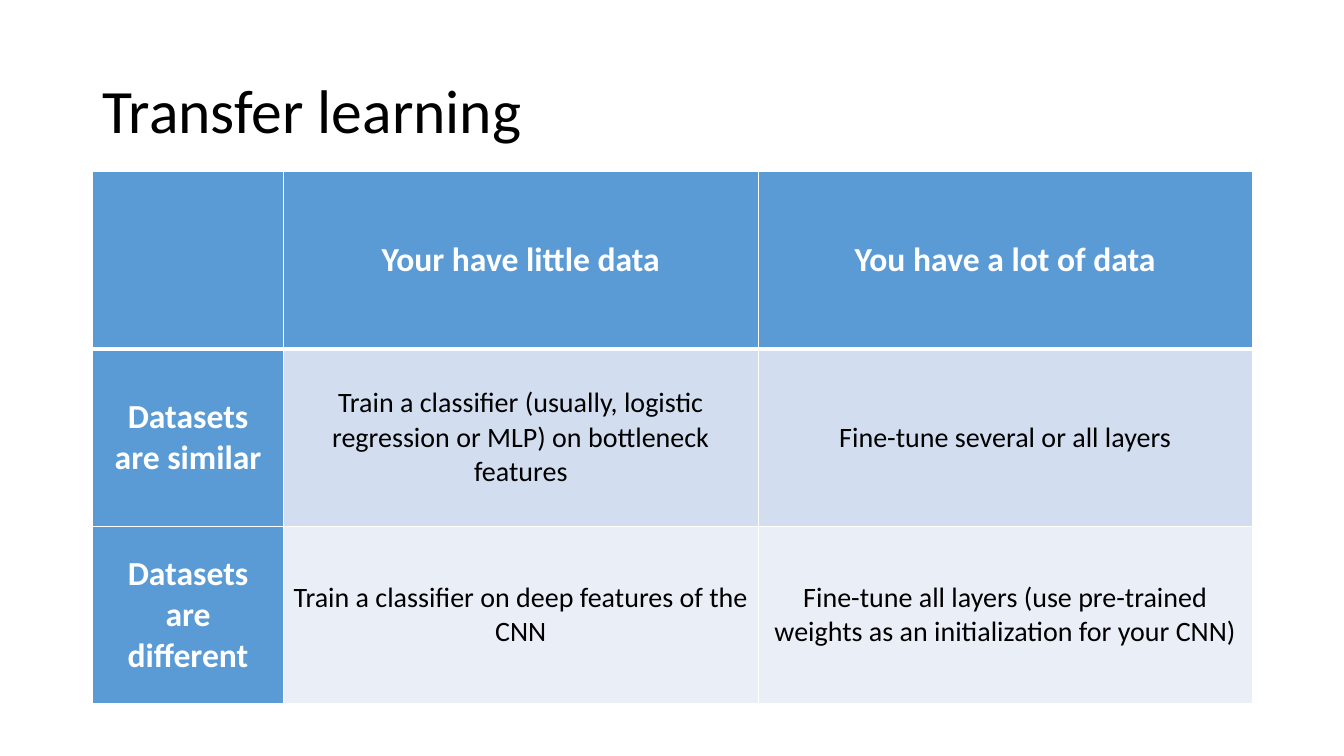
from dataclasses import dataclass

from lxml import etree
from pptx import Presentation
from pptx import util as u
from pptx.dml.color import RGBColor
from pptx.enum import text
from pptx.oxml import ns

PX = 9144


@dataclass(frozen=True)
class Theme:
    font: str = "Calibri"
    ink: str = "000000"
    paper: str = "FFFFFF"
    head: str = "5B9BD5"
    bands: tuple = ("D2DEEF", "EAEFF7")
    title: int = 44
    label: int = 24
    body: int = 20
    thin: int = 1
    thick: int = 3


class Deck:
    def __init__(self, theme, width, height):
        self.theme = theme
        self.file = Presentation()
        self.file.slide_width = width * PX
        self.file.slide_height = height * PX
        self.slide = self.file.slides.add_slide(self.file.slide_layouts[6])

    def run(self, para, words, size, color, bold=False):
        run = para.add_run()
        run.text = words
        run.font.name = self.theme.font
        run.font.size = u.Pt(size)
        run.font.bold = bold
        run.font.color.rgb = RGBColor.from_string(color)

    def title(self, words, *box):
        frame = self.slide.shapes.add_textbox(*(n * PX for n in box)).text_frame
        frame.word_wrap = True
        frame.vertical_anchor = text.MSO_ANCHOR.MIDDLE
        para = frame.paragraphs[0]
        para.line_spacing = 0.9
        self.run(para, words, self.theme.title, self.theme.ink)

    def edge(self, cell, side, width):
        props = cell._tc.get_or_add_tcPr()
        line = etree.SubElement(props, ns.qn(f"a:ln{side}"), w=str(u.Pt(width)))
        fill = etree.SubElement(line, ns.qn("a:solidFill"))
        etree.SubElement(fill, ns.qn("a:srgbClr"), val=self.theme.paper)

    def cell(self, cell, words, row, col):
        look = self.theme
        top = look.thick if row == 1 else look.thin
        base = look.thick if row == 0 else look.thin
        for side, width in zip("LRTB", (look.thin, look.thin, top, base)):
            self.edge(cell, side, width)
        label = row == 0 or col == 0
        cell.fill.solid()
        cell.fill.fore_color.rgb = RGBColor.from_string(
            look.head if label else look.bands[(row - 1) % 2])
        cell.vertical_anchor = text.MSO_ANCHOR.MIDDLE
        para = cell.text_frame.paragraphs[0]
        para.alignment = text.PP_ALIGN.CENTER
        if words:
            size, color = (look.label, look.paper) if label else (look.body, look.ink)
            self.run(para, words, size, color, label)

    def table(self, rows, left, top, widths, height):
        box = (left, top, sum(widths), height * len(rows))
        grid = self.slide.shapes.add_table(
            len(rows), len(widths), *(n * PX for n in box)).table
        for col, width in zip(grid.columns, widths):
            col.width = width * PX
        for r, row in enumerate(rows):
            grid.rows[r].height = height * PX
            for c, words in enumerate(row):
                self.cell(grid.cell(r, c), words, r, c)


def main():
    deck = Deck(Theme(), 1333, 750)
    deck.title("Transfer learning", 92, 40, 1150, 145)
    deck.table([
        ("", "Your have little data", "You have a lot of data"),
        ("Datasets are similar",
         "Train a classifier (usually, logistic regression or MLP) on bottleneck features",
         "Fine-tune several or all layers"),
        ("Datasets are different",
         "Train a classifier on deep features of the CNN",
         "Fine-tune all layers (use pre-trained weights as an initialization for your CNN)"),
    ], 92, 170, (189, 471, 490), 176)
    deck.file.save("out.pptx")


if __name__ == "__main__":
    main()
